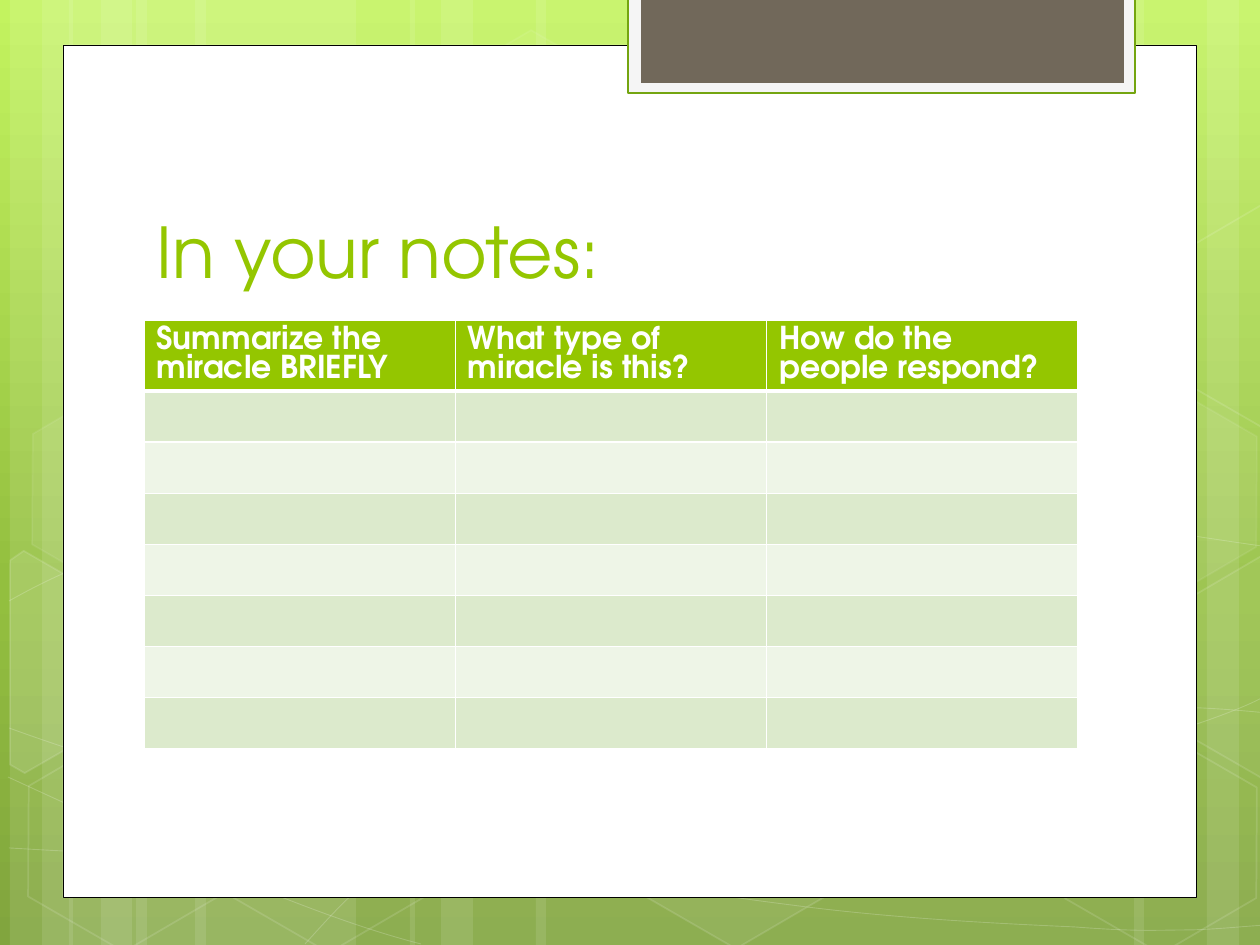
from lxml import etree
from pptx import Presentation
from pptx.dml.color import RGBColor
from pptx.enum import shapes, text
from pptx.oxml.ns import qn
from pptx.util import Emu, Pt

SCALE = 914400 / 126  # EMU per px
SLIDE_BOX = (0, 0, 1260, 945)
FONT = "TeX Gyre Adventor"
C = {"white": "FFFFFF", "black": "000000", "green": "94C600", "edge": "74A510",
     "frame": "F5F5F5", "brown": "71685A", "band": "DCEACC", "pale": "EEF5E7"}
BACKGROUND = [(0, "C3F35F"), (62, "93BF3F"), (100, "81A53E")]

# left, width
STRIPES = [(136, 220), (10, 63), (42, 105), (195, 220), (69, 63), (101, 105),
           (924, 220), (1207, 63), (1134, 105), (536, 388), (410, 63), (441, 105)]
# start point, then two handles and an end point for each cubic segment
CURVES = [
    [(9, 848), (77, 852), (145, 856), (239, 854), (334, 853), (451, 850), (577, 838),
     (703, 825), (882, 801), (998, 777), (1113, 753), (1231, 717), (1269, 694)],
    [(9, 601), (45, 581), (82, 562), (152, 543), (224, 524), (326, 496), (437, 488),
     (549, 479), (685, 478), (824, 488), (963, 498), (1193, 537), (1269, 547)],
    [(8, 777), (160, 847), (311, 916), (421, 944)],
    [(9, 728), (48, 742), (88, 756), (161, 776), (234, 795), (344, 827), (450, 848),
     (554, 869), (687, 892), (791, 905), (896, 919), (1008, 924), (1075, 927),
     (1140, 932), (1158, 930), (1191, 930), (1223, 929), (1246, 926), (1269, 925)],
    [(305, 944), (328, 919), (350, 893), (381, 871), (411, 848), (454, 823), (489, 805),
     (524, 788), (546, 780), (592, 767), (638, 754), (722, 737), (766, 728),
     (811, 719), (818, 719), (857, 717), (896, 714), (958, 709), (1000, 708),
     (1045, 707), (1116, 708), (1116, 708), (1144, 708), (1173, 708), (1201, 708),
     (1223, 709), (1245, 711), (1256, 712), (1264, 713), (1264, 712), (1268, 713)],
]
# left, top, fill opacity, line opacity
HEXAGONS = [(421, 45, 4, 8), (626, 742, 6, 12), (14, 745, 0, 12), (18, 393, 7, 8),
            (219, 746, 0, 12), (949, 571, 10, 12), (1051, 747, 0, 12),
            (1051, 396, 7, 8)]
LEFT_CUT = [(0, 15), (7, 0), (119, 0), (174, 97), (119, 192), (102, 192)]
RIGHT_CUT = [(0, 95), (54, 0), (65, 0), (171, 182), (165, 192), (55, 192)]
# left, top, outline, fill opacity
CUT_HEXAGONS = [(-42, 578, LEFT_CUT, 10), (1155, 559, RIGHT_CUT, 4),
                (1155, 208, RIGHT_CUT, 0)]
TILT = 30
HEADERS = ["Summarize the miracle BRIEFLY", "What type of miracle is this?",
           "How do the people respond?"]


def px(n):
    return Emu(round(n * SCALE))


def paint(fill, color, alpha=100):
    fill.solid()
    fill.fore_color.rgb = RGBColor.from_string(C[color])
    if alpha < 100:
        clr = fill._xPr.find(".//" + qn("a:srgbClr"))
        etree.SubElement(clr, qn("a:alpha"), val=str(alpha * 1000))


def style(sp, fill=None, line=None, width=1, fill_alpha=100, line_alpha=100):
    sp.shadow.inherit = False
    if fill and fill_alpha:
        paint(sp.fill, fill, fill_alpha)
    else:
        sp.fill.background()
    if line:
        paint(sp.line.fill, line, line_alpha)
        sp.line.width = Pt(width)
    else:
        sp.line.fill.background()
    return sp


def add_box(slide, box, kind=shapes.MSO_SHAPE.RECTANGLE, **fmt):
    return style(slide.shapes.add_shape(kind, *map(px, box)), **fmt)


def add_outline(slide, x, y, points, close, **fmt):
    points = [(x + a, y + b) for a, b in points]
    builder = slide.shapes.build_freeform(*points[0], scale=SCALE)
    builder.add_line_segments(points[1:], close=close)
    return style(builder.convert_to_shape(), **fmt)


def bend(sp):
    """Turn every three straight segments into one cubic segment."""
    lines = list(sp.element.iter(qn("a:lnTo")))
    for i in range(0, len(lines), 3):
        cubic = etree.Element(qn("a:cubicBezTo"))
        lines[i].addprevious(cubic)
        for ln in lines[i:i + 3]:
            cubic.append(ln[0])
            ln.getparent().remove(ln)


def write(tf, content, size, color, bold=False):
    p = tf.paragraphs[0]
    p.alignment = text.PP_ALIGN.LEFT
    r = p.add_run()
    r.text = content
    r.font.name, r.font.size, r.font.bold = FONT, Pt(size), bold
    r.font.color.rgb = RGBColor.from_string(C[color])


def add_background(slide, box):
    x, y, _, h = box
    # Gradient
    fill = slide.background.fill
    fill.gradient()
    fill.gradient_angle = 270
    stops = slide.background._cSld.find(".//" + qn("a:gsLst"))
    for gs in list(stops):
        stops.remove(gs)
    for pos, color in BACKGROUND:
        gs = etree.SubElement(stops, qn("a:gs"), pos=str(pos * 1000))
        etree.SubElement(gs, qn("a:srgbClr"), val=color)
    # Stripes and curves
    for left, width in STRIPES:
        add_box(slide, (x + left, y, width, h), fill="white", fill_alpha=10)
    for points in CURVES:
        bend(add_outline(slide, x, y, points, False,
                         line="white", width=0.5, line_alpha=20))
    # Whole and cut hexagons
    for left, top, fill_alpha, line_alpha in HEXAGONS:
        sp = add_box(slide, (x + left, y + top, 220, 192), shapes.MSO_SHAPE.HEXAGON,
                     fill="white", fill_alpha=fill_alpha,
                     line="white", line_alpha=line_alpha)
        sp.adjustments[0], sp.adjustments[1] = 0.285, 1.155
        sp.rotation = TILT
    for left, top, points, fill_alpha in CUT_HEXAGONS:
        sp = add_outline(slide, x + left, y + top, points, True, fill="white",
                         fill_alpha=fill_alpha, line="white", line_alpha=12)
        sp.rotation = TILT


def add_panel(slide, box):
    x, y, _, _ = box
    add_box(slide, box, fill="white", line="black", width=0.5)
    # Tab hanging from the top edge
    add_box(slide, (x + 565, y - 48, 507, 96), fill="frame", line="edge", width=1.25)
    add_box(slide, (x + 578, y - 48, 483, 86), fill="brown")


def add_title(slide, box):
    sp = slide.shapes.title
    slide.shapes.element.append(sp.element)  # in front of the panel
    sp.left, sp.top, sp.width, sp.height = map(px, box)
    sp.text_frame.vertical_anchor = text.MSO_ANCHOR.BOTTOM
    write(sp.text_frame, "In your notes:", 40, "green")


def set_borders(cell, **widths):
    tcPr = cell._tc.get_or_add_tcPr()
    for side in "LRTB":
        ln = etree.SubElement(tcPr, qn("a:ln" + side), w=str(Pt(widths.get(side, 1))))
        solid = etree.SubElement(ln, qn("a:solidFill"))
        etree.SubElement(solid, qn("a:srgbClr"), val=C["white"])


def add_notes_table(slide, box, rows=8, head=70):
    x, y, w, h = box
    table = slide.shapes.add_table(rows, len(HEADERS), *map(px, box)).table
    table.first_row = table.horz_banding = False
    for col in table.columns:
        col.width = px(w / len(HEADERS))
    for i, row in enumerate(table.rows):
        row.height = px((h - head) / (rows - 1) if i else head)
        for j, cell in enumerate(row.cells):
            set_borders(cell, T=3 if i == 1 else 1, B=1 if i else 3)
            paint(cell.fill, ("pale", "band")[i % 2] if i else "green")
            if i == 0:
                write(cell.text_frame, HEADERS[j], 18, "white", bold=True)


def main():
    prs = Presentation()
    prs.slide_width, prs.slide_height = map(px, SLIDE_BOX[2:])
    slide = prs.slides.add_slide(prs.slide_layouts[5])
    add_background(slide, SLIDE_BOX)
    add_panel(slide, (63, 45, 1134, 853))
    add_title(slide, (144, 141, 968, 158))
    add_notes_table(slide, (144, 320, 934, 427))
    prs.save("out.pptx")


if __name__ == "__main__":
    main()
